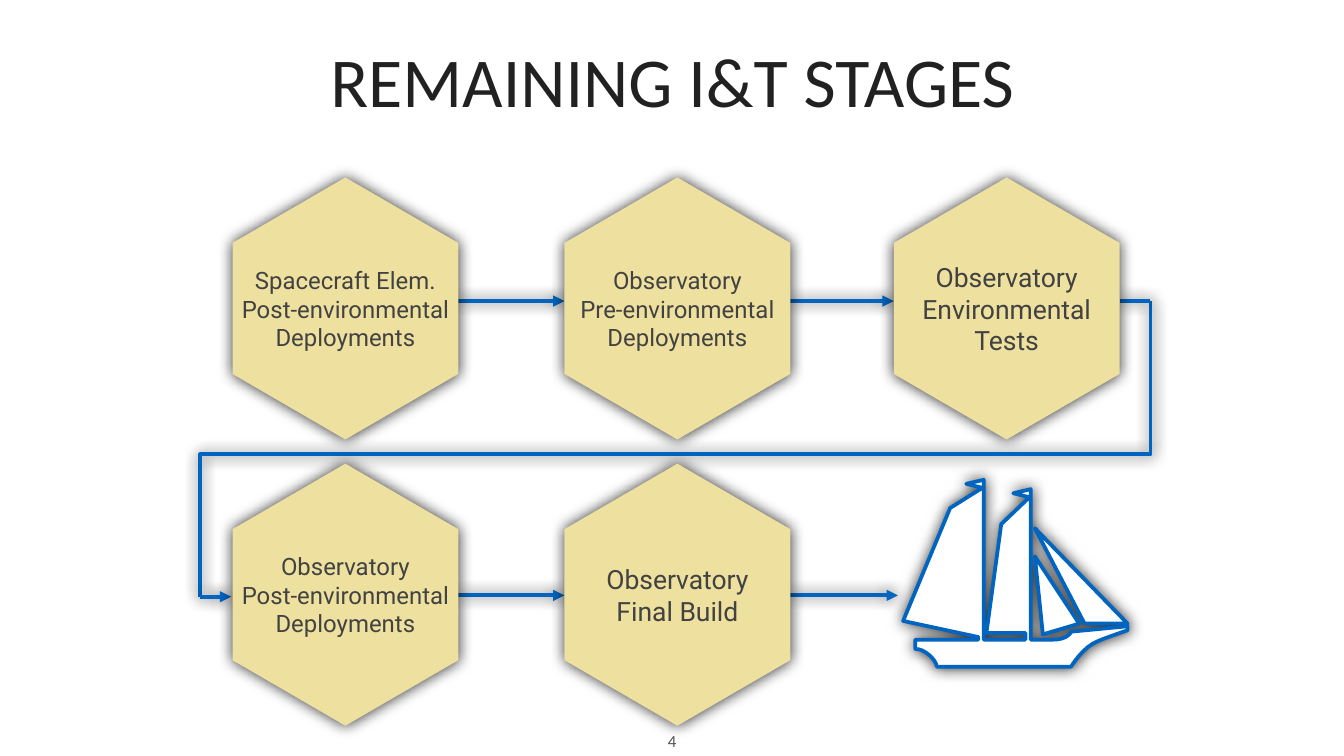
from dataclasses import dataclass

from lxml import etree
from pptx import Presentation
from pptx import util as u
from pptx.dml.color import RGBColor
from pptx.enum import shapes, text
from pptx.oxml.ns import qn

BLUE = RGBColor(0x00, 0x65, 0xC1)
SAND = RGBColor(0xEE, 0xE0, 0x9E)
WHITE = RGBColor(0xFF, 0xFF, 0xFF)
TITLE_INK = RGBColor(0x21, 0x21, 0x21)
STAGE_INK = RGBColor(0x42, 0x42, 0x42)
NUMBER_INK = RGBColor(0x53, 0x53, 0x53)

SLIDE_WIDTH = 10
SLIDE_HEIGHT = SLIDE_WIDTH * 9 / 16
COLUMNS = (1.73, 4.20, 6.65)  # left edges of the hexagons
ROWS = (1.32, 3.45)  # top edges of the hexagons
HEX_WIDTH, HEX_HEIGHT = 1.68, 1.95
FLOW_Y = (2.24, 4.43)  # height of the arrows in each row
TURN_LEFT, TURN_RIGHT, TURN_Y = 1.49, 8.56, 3.38

Point = tuple[float, float]
# A ship step is a point, or the three points of a Bezier curve
Step = tuple[float, ...]


@dataclass(frozen=True)
class Stage:
    column: int
    row: int
    lines: tuple[str, ...]
    size: float = 12.8


@dataclass(frozen=True)
class FlowLine:
    left: float
    right: float
    y: float
    arrow: bool = True


STAGES = (
    Stage(0, 0, ("Spacecraft Elem.", "Post-environmental Deployments")),
    Stage(1, 0, ("Observatory", "Pre-environmental Deployments")),
    Stage(2, 0, ("Observatory Environmental Tests",), 14.2),
    Stage(0, 1, ("Observatory", "Post-environmental Deployments")),
    Stage(1, 1, ("Observatory", "Final Build"), 14.2),
)

FLOW_LINES = (
    FlowLine(COLUMNS[2] + HEX_WIDTH, TURN_RIGHT, FLOW_Y[0], arrow=False),
    FlowLine(COLUMNS[0] + HEX_WIDTH, COLUMNS[1], FLOW_Y[0]),
    FlowLine(COLUMNS[1] + HEX_WIDTH, COLUMNS[2], FLOW_Y[0]),
    FlowLine(TURN_LEFT, COLUMNS[0] - 0.01, FLOW_Y[1] + 0.01),
    FlowLine(COLUMNS[0] + HEX_WIDTH, COLUMNS[1], FLOW_Y[1]),
    FlowLine(COLUMNS[1] + HEX_WIDTH, COLUMNS[2] + 0.03, FLOW_Y[1]),
)

SHIP_LEFT, SHIP_TOP = 6.72, 3.57
# Hundredths of an inch from the ship's top left corner
HULL_AND_SAILS: list[Step] = [
    (60, 0), (47, 3), (59, 6), (35, 21), (0, 105), (56, 117), (56, 119),
    (32, 119, 9, 119, 9, 119), (9, 119, 9, 123, 9, 126),
    (15, 125, 25, 134, 25, 139), (125, 139),
    (125, 139, 134, 124, 145, 120), (152, 117, 167, 112, 167, 112),
    (167, 109), (125, 113), (125, 113, 123, 119, 111, 119),
    (109, 119, 103, 119, 95, 119), (95, 7), (82, 10), (94, 13), (73, 33),
    (62, 114), (91, 114), (91, 119), (82, 119, 71, 119, 60, 119),
]
OUTER_JIB: list[Step] = [(98, 36), (135, 107), (167, 107)]
INNER_JIB: list[Step] = [(98, 57), (104, 115), (131, 107)]


def flatten(steps: list[Step], pieces: int = 8) -> list[Point]:
    """Turn the curved steps into short straight ones."""
    points: list[Point] = []
    for step in steps:
        if len(step) == 2:
            points.append(step)
            continue
        controls = [points[-1], step[:2], step[2:4], step[4:]]
        for i in range(1, pieces + 1):
            t = i / pieces
            weights = ((1 - t) ** 3, 3 * t * (1 - t) ** 2,
                       3 * t * t * (1 - t), t ** 3)
            points.append(tuple(
                sum(w * c[axis] for w, c in zip(weights, controls))
                for axis in (0, 1)))
    return points


def add_glow_shadow(shape) -> None:
    """Add a soft, centred shadow; call after fill and line are set."""
    effects = etree.SubElement(shape._element.spPr, qn("a:effectLst"))
    shadow = etree.SubElement(effects, qn("a:outerShdw"), blurRad=str(u.Pt(8)),
                              dist="0", dir=str(315 * 60000), rotWithShape="0")
    colour = etree.SubElement(shadow, qn("a:srgbClr"), val="000000")
    etree.SubElement(colour, qn("a:alpha"), val="80000")


def add_outline(page, contours: list[list[Point]], fill: RGBColor | None = None,
                line: RGBColor | None = None, close: bool = True):
    """Draw one freeform from contours given in inches."""
    builder = None
    for contour in contours:
        start, *rest = [(u.Inches(x), u.Inches(y)) for x, y in contour]
        if builder is None:
            builder = page.shapes.build_freeform(*start)
        else:
            builder.move_to(*start)
        builder.add_line_segments(rest, close=close)
    shape = builder.convert_to_shape()
    if fill is None:
        shape.fill.background()
    else:
        shape.fill.solid()
        shape.fill.fore_color.rgb = fill
    if line is None:
        shape.line.fill.background()
    else:
        shape.line.color.rgb = line
        shape.line.width = u.Pt(2)
    add_glow_shadow(shape)
    return shape


def add_flow_line(page, flow: FlowLine) -> None:
    connector = page.shapes.add_connector(
        shapes.MSO_CONNECTOR.STRAIGHT, u.Inches(flow.left), u.Inches(flow.y),
        u.Inches(flow.right), u.Inches(flow.y))
    connector.line.color.rgb = BLUE
    connector.line.width = u.Pt(2)
    if flow.arrow:
        etree.SubElement(connector.line._ln, qn("a:tailEnd"), type="triangle")
    add_glow_shadow(connector)


def write(shape, lines: tuple[str, ...], size: float, font: str,
          ink: RGBColor, inset: float, wrap: bool = True) -> None:
    frame = shape.text_frame
    frame.word_wrap = wrap
    frame.margin_left = frame.margin_right = u.Inches(inset)
    frame.margin_top = frame.margin_bottom = u.Inches(inset)
    frame.text = "\n".join(lines)
    for para in frame.paragraphs:
        para.alignment = text.PP_ALIGN.CENTER
        para.font.size = u.Pt(size)
        para.font.name = font
        para.font.color.rgb = ink


def add_stage(page, stage: Stage) -> None:
    left, top = COLUMNS[stage.column], ROWS[stage.row]
    corners = [(0.5, 0), (1, 0.25), (1, 0.75), (0.5, 1), (0, 0.75), (0, 0.25)]
    hexagon = add_outline(
        page, [[(left + x * HEX_WIDTH, top + y * HEX_HEIGHT) for x, y in corners]], SAND)
    write(hexagon, stage.lines, stage.size, "Roboto", STAGE_INK, 0.03)
    hexagon.text_frame.vertical_anchor = text.MSO_ANCHOR.MIDDLE


def add_ship(page) -> None:
    contours = [
        [(SHIP_LEFT + x / 100, SHIP_TOP + y / 100) for x, y in flatten(steps)]
        for steps in (HULL_AND_SAILS, OUTER_JIB, INNER_JIB)
    ]
    add_outline(page, contours, WHITE, BLUE)


def main() -> None:
    deck = Presentation()
    deck.slide_width, deck.slide_height = u.Inches(SLIDE_WIDTH), u.Inches(SLIDE_HEIGHT)
    page = deck.slides.add_slide(deck.slide_layouts[5])

    title = page.shapes.title
    title.left, title.top = u.Inches(1.46), u.Inches(0.05)
    title.width, title.height = u.Inches(7.09), u.Inches(1.08)
    write(title, ("REMAINING I&T STAGES",), 37.5, "Calibri", TITLE_INK, 0.08)
    title.text_frame.vertical_anchor = text.MSO_ANCHOR.MIDDLE

    add_outline(page, [[(TURN_LEFT, FLOW_Y[1] + 0.01), (TURN_LEFT, TURN_Y),
                        (TURN_RIGHT, TURN_Y), (TURN_RIGHT, FLOW_Y[0])]],
                line=BLUE, close=False)
    for flow in FLOW_LINES:
        add_flow_line(page, flow)
    for stage in STAGES:
        add_stage(page, stage)
    add_ship(page)

    number = page.shapes.add_textbox(
        u.Inches(4.89), u.Inches(5.36), u.Inches(0.22), u.Inches(0.31))
    write(number, ("4",), 9, "Calibri", NUMBER_INK, 0.08, wrap=False)
    deck.save("out.pptx")


if __name__ == "__main__":
    main()
